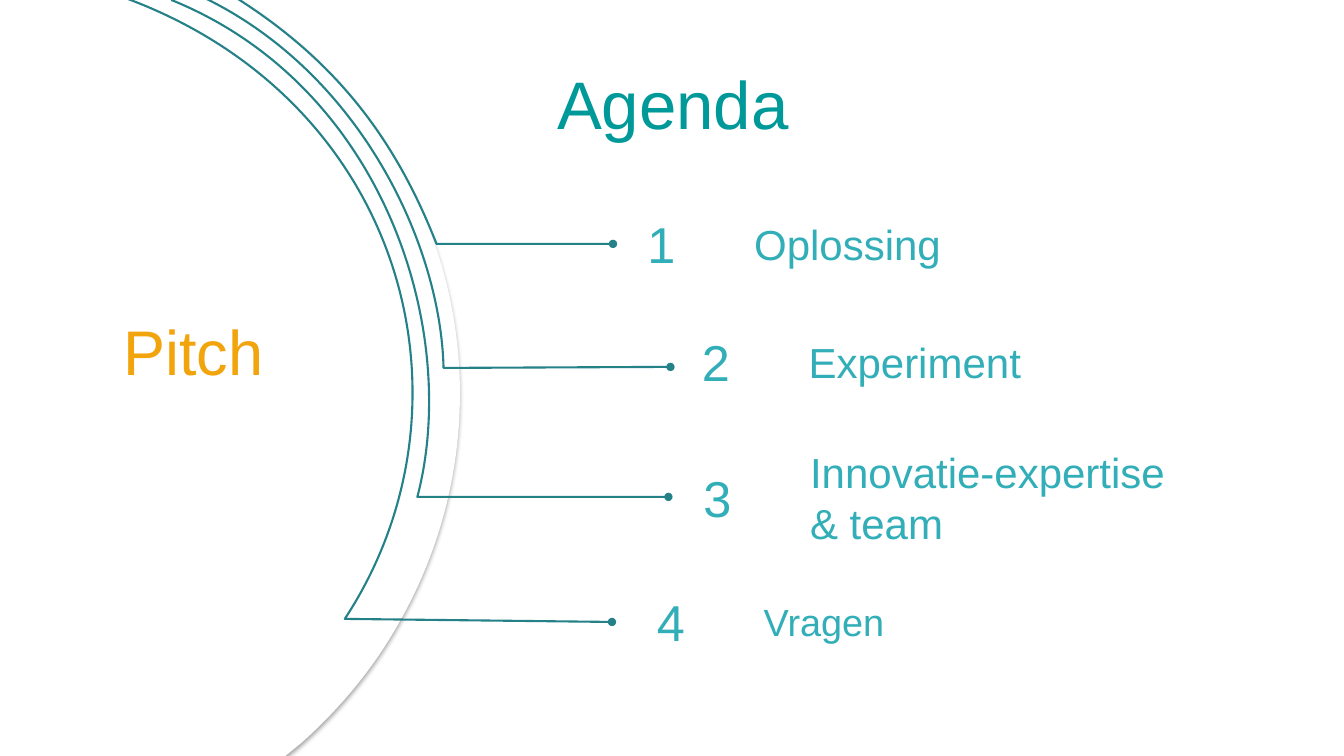
"""Build an agenda slide whose four topics branch off nested arcs."""
from lxml.etree import SubElement
from pptx import Presentation
from pptx.dml.color import RGBColor
from pptx.enum.text import MSO_ANCHOR, MSO_AUTO_SIZE, PP_ALIGN
from pptx.oxml import parse_xml
from pptx.oxml.ns import nsdecls, qn
from pptx.util import Inches, Pt

COLORS = {"white": "FFFFFF", "line": "258188", "topic": "32AEB8",
          "pitch": "F2A40D", "title": "009999", "shade": "000000"}
CELL = Inches(0.1)
COLS, ROWS = 133.3, 75
STEPS = 32

DISCS = [
    (100, [(-0.4, -0.2), (23.6, -0.2), (25.1, 0.8),
           (30.9, 4.7, 35.8, 9.8, 39.4, 16.1),
           (47.7, 30.3, 47.7, 47.8, 39.4, 62.1),
           (36.9, 66.5, 33.6, 70.4, 29.9, 73.7), (28.3, 75), (-0.4, 75)]),
    (50, [(-0.1, -0.7), (19.9, -0.7), (22.1, 0.5),
          (28.7, 4.3, 34.4, 9.9, 38.3, 16.7),
          (46.3, 30.5, 46.3, 47.4, 38.4, 61.1),
          (35.4, 66.2, 31.5, 70.6, 26.9, 74.1), (26.3, 74.5), (0, 74.5)]),
    (50, [(0, -0.2), (17, -0.2), (18.9, 0.7),
          (26.3, 4.3, 32.6, 10.2, 36.9, 17.6),
          (44.5, 30.8, 44.6, 47, 36.9, 60.3),
          (33.6, 66, 29, 70.8, 23.7, 74.4), (22.7, 75), (0, 75)]),
    (100, [(0, -0.2), (11.4, -0.2), (13.2, 0.4),
           (22.5, 3.5, 30.4, 9.9, 35.5, 18.7),
           (42.8, 31.3, 42.8, 47, 35.5, 59.7),
           (31.8, 66, 26.6, 71.1, 20.5, 74.7), (19.9, 75), (0, 75)]),
]
ARCS = [
    [(23.6, -0.1), (33.8, 6.4, 39.4, 14.3, 43.3, 24.2), (60.8, 24.2)],
    [(20.1, -0.3), (35.7, 7.2, 43.7, 24.2, 44, 36.5), (66.5, 36.4)],
    [(17, 0), (38.2, 8.6, 45.7, 32.9, 41.4, 49.3), (66.3, 49.3)],
    [(12.7, -0.1), (40.4, 10.3, 48, 40.4, 34.2, 61.4), (60.7, 61.7)],
]
TOPICS = [("Oplossing", 30, 60.35, 24.15), ("Experiment", 30, 65.75, 35.85),
          ("Innovatie-expertise\v& team", 30, 65.9, 49.35),
          ("Vragen", 27, 61.3, 61.65)]


def cells(count):
    """Turn grid cells into a length."""
    return round(count * CELL)


def bend(start, curve):
    """Return points along a cubic curve, without its start."""
    x1, y1, x2, y2, x3, y3 = curve
    dots = []
    for step in range(1, STEPS + 1):
        t = step / STEPS
        a, b, c, d = (1 - t) ** 3, 3 * t * (1 - t) ** 2, 3 * t * t * (1 - t), t ** 3
        dots.append((a * start[0] + b * x1 + c * x2 + d * x3,
                     a * start[1] + b * y1 + c * y2 + d * y3))
    return dots


def curve(form, route, close):
    """Set the outline of a freeform to true lines and curves."""
    track = next(form.element.iter(qn("a:path")))
    for old in list(track):
        track.remove(old)
    for rank, part in enumerate(route):
        kind = "cubicBezTo" if len(part) == 6 else "lnTo" if rank else "moveTo"
        move = SubElement(track, qn(f"a:{kind}"))
        for x, y in zip(part[::2], part[1::2]):
            SubElement(move, qn("a:pt"), x=str(cells(x) - form.left),
                       y=str(cells(y) - form.top))
    if close:
        SubElement(track, qn("a:close"))


def trace(shapes, route, close):
    """Draw a route of line ends and curves, in a box that fits it."""
    dots = [route[0]]
    for part in route[1:]:
        dots += bend(dots[-1], part) if len(part) == 6 else [part]
    dots = [(cells(x), cells(y)) for x, y in dots]
    pen = shapes.build_freeform(*dots[0], scale=1.0)
    pen.add_line_segments(dots[1:], close=close)
    form = pen.convert_to_shape()
    curve(form, route, close)
    form.shadow.inherit = False
    return form


def disc(shapes, route, alpha):
    """Draw a white disc of the given opacity."""
    form = trace(shapes, route, True)
    form.fill.solid()
    form.fill.fore_color.rgb = RGBColor.from_string(COLORS["white"])
    form.line.fill.background()
    if alpha < 100:
        tint = form.element.spPr.find(qn("a:solidFill"))[0]
        tint.append(parse_xml(f'<a:alpha {nsdecls("a")} val="{alpha * 1000}"/>'))
    return form


def shade(form):
    """Give a shape a soft shadow straight below it."""
    form.element.spPr.find(qn("a:effectLst")).append(parse_xml(
        f'<a:outerShdw {nsdecls("a")} blurRad="{Pt(3.1)}" dist="{Pt(1.8)}" '
        f'dir="5400000" rotWithShape="0"><a:srgbClr val="{COLORS["shade"]}">'
        '<a:alpha val="35000"/></a:srgbClr></a:outerShdw>'))


def arc(shapes, route):
    """Draw an open line that ends in a dot."""
    form = trace(shapes, route, False)
    form.fill.background()
    form.line.color.rgb = RGBColor.from_string(COLORS["line"])
    form.line.width = Pt(1.5)
    form.element.spPr.find(qn("a:ln")).append(
        parse_xml(f'<a:tailEnd {nsdecls("a")} type="oval"/>'))


def label(shapes, text, size, color, left, mid, width, align=PP_ALIGN.LEFT, inset=1.2):
    """Add text centred on a grid row, in a box as tall as its lines."""
    high = 1 + size / 6 * (text.count("\v") + 1)
    box = shapes.add_textbox(*map(cells, (left, mid - high / 2, width, high)))
    frame = box.text_frame
    frame.text = text
    frame.word_wrap = True
    frame.auto_size = MSO_AUTO_SIZE.SHAPE_TO_FIT_TEXT
    frame.vertical_anchor = MSO_ANCHOR.MIDDLE
    frame.margin_left = frame.margin_right = cells(inset)
    line = frame.paragraphs[0]
    line.alignment = align
    for run in line.runs:
        run.font.name = "Arial"
        run.font.size = Pt(size)
        run.font.color.rgb = RGBColor.from_string(COLORS[color])
    return box


def topic(shapes, count, text, size, left, mid):
    """Group a number with its topic."""
    group = shapes.add_group_shape().shapes
    label(group, text, size, "topic", left + 13.25, mid, 49.3)
    label(group, str(count), 36, "topic", left, mid, 10.5, PP_ALIGN.CENTER)


def main():
    """Build and save the slide."""
    deck = Presentation()
    deck.slide_width, deck.slide_height = cells(COLS), cells(ROWS)
    shapes = deck.slides.add_slide(deck.slide_layouts[6]).shapes
    plates = [disc(shapes, route, alpha) for alpha, route in DISCS]
    shade(plates[0])
    for route in ARCS:
        arc(shapes, route)
    for count, item in enumerate(TOPICS, 1):
        topic(shapes, count, *item)
    label(shapes, "Pitch", 45, "pitch", 11.25, 34.75, 32.5, inset=1)
    title = label(shapes, "Agenda", 48, "title", 0.1, 10.2, COLS, PP_ALIGN.CENTER, 1)
    title.text_frame.auto_size = MSO_AUTO_SIZE.NONE
    title.text_frame.paragraphs[0].space_before = Pt(9.6)
    deck.save("out.pptx")


if __name__ == "__main__":
    main()
